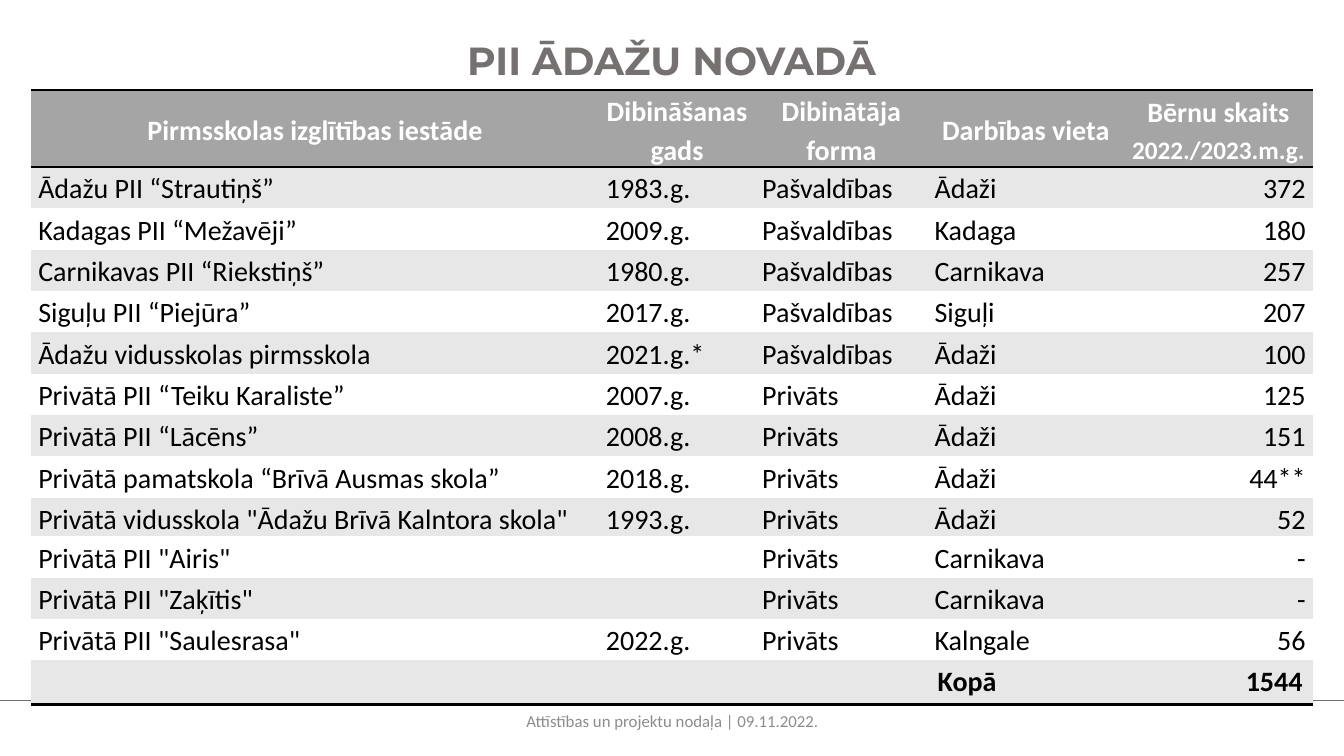
"""Build a slide listing the preschools of the Ādaži district."""
from lxml.etree import SubElement
from pptx import Presentation
from pptx.dml.color import RGBColor
from pptx.enum.shapes import MSO_CONNECTOR
from pptx.enum.text import MSO_ANCHOR, PP_ALIGN
from pptx.oxml.ns import qn
from pptx.util import Inches, Pt

COLORS = {"title": "767171", "foot": "8C8C8C", "head": "A5A5A5",
          "band": "E7E7E7", "white": "FFFFFF", "black": "000000"}
PLAIN = "{2D5ABB26-0587-4C30-8999-92F81FD0307C}"
COLS = [5.63, 1.55, 1.71, 1.95, 1.87]
HEADS = ["Pirmsskolas izglītības iestāde", "Dibināšanas gads",
         "Dibinātāja forma", "Darbības vieta"]
COUNT = [("Bērnu skaits ", 20), ("2022./2023.m.g.", 18)]
TOWN, OWN = "Pašvaldības", "Privāts"
SCHOOLS = [
    ("Ādažu PII “Strautiņš”", "1983.g.", TOWN, "Ādaži", "372"),
    ("Kadagas PII “Mežavēji”", "2009.g.", TOWN, "Kadaga", "180"),
    ("Carnikavas PII “Riekstiņš”", "1980.g.", TOWN, "Carnikava", "257"),
    ("Siguļu PII “Piejūra”", "2017.g.", TOWN, "Siguļi", "207"),
    ("Ādažu vidusskolas pirmsskola", "2021.g.*", TOWN, "Ādaži", "100"),
    ("Privātā PII “Teiku Karaliste”", "2007.g.", OWN, "Ādaži", "125"),
    ("Privātā PII “Lācēns”", "2008.g.", OWN, "Ādaži", "151"),
    ("Privātā pamatskola “Brīvā Ausmas skola”", "2018.g.", OWN, "Ādaži", "44**"),
    ('Privātā vidusskola "Ādažu Brīvā Kalntora skola"', "1993.g.", OWN, "Ādaži", "52"),
    ('Privātā PII "Airis"', "", OWN, "Carnikava", "-"),
    ('Privātā PII "Zaķītis"', "", OWN, "Carnikava", "-"),
    ('Privātā PII "Saulesrasa"', "2022.g.", OWN, "Kalngale", "56"),
]
TOTAL = ("", "", "", "Kopā", "1544")
ROWS = [0.51] + [0.41] * 8 + [0.26] + [0.41] * 3 + [0.44]


def color(name):
    """Return a named colour."""
    return RGBColor.from_string(COLORS[name])


def add_run(para, text, size, tint, bold=False, face="Calibri"):
    """Add one formatted run to a paragraph."""
    run = para.add_run()
    run.text = text
    font = run.font
    font.size, font.bold, font.name = Pt(size), bold, face
    font.color.rgb = color(tint)


def add_title(slide):
    """Place and fill the title."""
    title = slide.shapes.title
    title.left, title.top = Inches(0.44), Inches(0.31)
    title.width, title.height = Inches(12.44), Inches(0.57)
    para = title.text_frame.paragraphs[0]
    para.alignment = PP_ALIGN.CENTER
    add_run(para, "PII ĀDAŽU NOVADĀ", 28, "title", True, "Montserrat")


def add_foot(slide):
    """Add the footer text and its rule."""
    box = slide.shapes.add_textbox(Inches(4.42), Inches(6.95), Inches(4.5), Inches(0.4))
    frame = box.text_frame
    frame.word_wrap = True
    frame.vertical_anchor = MSO_ANCHOR.MIDDLE
    para = frame.paragraphs[0]
    para.alignment = PP_ALIGN.CENTER
    add_run(para, "Attīstības un projektu nodaļa | 09.11.2022.".replace(" | ", " | "), 12, "foot")
    rule = slide.shapes.add_connector(
        MSO_CONNECTOR.STRAIGHT, Inches(0), Inches(6.95), Inches(13.33), Inches(6.95))
    rule.line.color.rgb = color("title")
    rule.line.width = Pt(0.5)
    SubElement(rule._element.spPr, qn("a:effectLst"))


def add_edge(cell, side):
    """Draw a black border on one side of a cell."""
    edge = SubElement(cell._tc.get_or_add_tcPr(), qn(f"a:ln{side}"), w=str(Pt(2)))
    fill = SubElement(edge, qn("a:solidFill"))
    SubElement(fill, qn("a:srgbClr"), val=COLORS["black"])


def fill_cell(cell, runs, align, back, tint="black", bold=False, tight=True):
    """Fill a cell and set its text."""
    cell.fill.solid()
    cell.fill.fore_color.rgb = color(back)
    if not runs:
        return
    para = cell.text_frame.paragraphs[0]
    para.alignment = align
    if tight:
        cell.margin_left = cell.margin_right = Inches(0.07)
        cell.margin_top = cell.margin_bottom = 0
        para.line_spacing, para.space_after = 1.15, Pt(8)
    for text, size in runs:
        add_run(para, text, size, tint, bold)


def add_list(slide):
    """Add the table of schools."""
    last = len(ROWS) - 1
    frame = slide.shapes.add_table(len(ROWS), len(COLS), Inches(0.31), Inches(0.89),
                                   Inches(sum(COLS)), Inches(sum(ROWS)))
    table = frame.table
    table.first_row = table.horz_banding = False
    table._tbl.tblPr.find(qn("a:tableStyleId")).text = PLAIN
    for col, width in zip(table.columns, COLS):
        col.width = Inches(width)
    for row, height in zip(table.rows, ROWS):
        row.height = Inches(height)
    for col, runs in enumerate([[(head, 20)] for head in HEADS] + [COUNT]):
        cell = table.cell(0, col)
        cell.vertical_anchor = MSO_ANCHOR.MIDDLE
        add_edge(cell, "T")
        add_edge(cell, "B")
        fill_cell(cell, runs, PP_ALIGN.CENTER, "head", "white", True)
    for row, items in enumerate(SCHOOLS + [TOTAL], 1):
        back = "band" if row % 2 else "white"
        for col, text in enumerate(items):
            cell = table.cell(row, col)
            if row == last:
                add_edge(cell, "B")
            align = PP_ALIGN.RIGHT if col == len(COLS) - 1 else PP_ALIGN.LEFT
            fill_cell(cell, [(text, 20)] if text else [], align, back,
                      bold=row == last, tight=row < last)


def main():
    """Build and save the slide."""
    deck = Presentation()
    deck.slide_width, deck.slide_height = Inches(13.33), Inches(7.5)
    slide = deck.slides.add_slide(deck.slide_layouts[5])
    add_foot(slide)
    add_title(slide)
    add_list(slide)
    deck.save("out.pptx")


if __name__ == "__main__":
    main()
